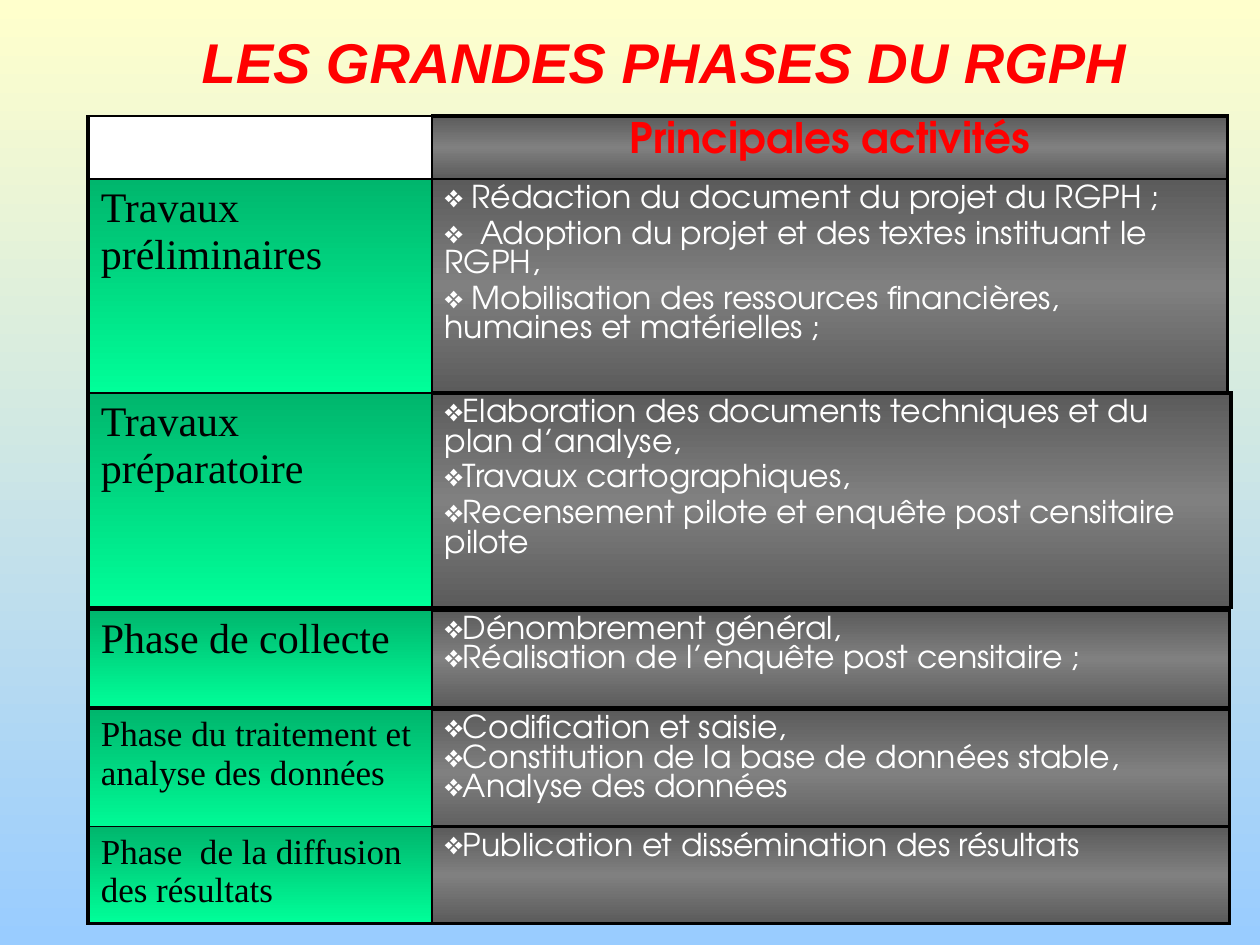
from dataclasses import dataclass

from lxml.etree import SubElement
from pptx import Presentation
from pptx.dml.color import RGBColor
from pptx.enum.text import MSO_ANCHOR, MSO_AUTO_SIZE, PP_ALIGN
from pptx.oxml.ns import qn
from pptx.util import Inches, Pt


@dataclass(frozen=True)
class Theme:
    sky_top: str = "FFFFCC"
    sky_bottom: str = "99CCFF"
    accent: str = "FF0000"
    ink: str = "000000"
    paper: str = "FFFFFF"
    phase_fill: str = "00FF99"
    activity_fill: str = "808080"
    shade: int = 46275  # darkens the edge of a cell gradient
    title_font: str = "Arial"
    phase_font: str = "Times New Roman"
    activity_font: str = "TeX Gyre Adventor"
    title_size: int = 32
    large_size: int = 24
    medium_size: int = 20
    activity_size: int = 18
    thick: float = 2.25
    thin: float = 1


theme = Theme()


def write(frame, *lines, size, font, color, bold=False, italic=False,
          align=PP_ALIGN.LEFT, bullet=None, gap=0):
    """Fill a text frame; gap is the space between paragraphs in type sizes."""
    for index, line in enumerate(lines):
        paragraph = frame.paragraphs[0] if index == 0 else frame.add_paragraph()
        if bullet:
            properties = paragraph._p.get_or_add_pPr()
            properties.set("marL", "0")
            properties.set("indent", "0")
            SubElement(properties, qn("a:buChar"), char=bullet)
        paragraph.alignment = align
        paragraph.space_before = Pt(size * gap if index else 0)
        run = paragraph.add_run()
        run.text = line
        run.font.size, run.font.name = Pt(size), font
        run.font.bold, run.font.italic = bold, italic
        run.font.color.rgb = RGBColor.from_string(color)


def format_cell(cell, borders, color, stops):
    """Draw the borders and a vertical gradient of (position, is_dark) stops."""
    properties = cell._tc.get_or_add_tcPr()
    for side, width in borders.items():
        line = SubElement(properties, qn(f"a:ln{side}"), w=str(Pt(width)))
        solid = SubElement(line, qn("a:solidFill"))
        SubElement(solid, qn("a:srgbClr"), val=theme.ink)
    if not stops:
        cell.fill.solid()
        cell.fill.fore_color.rgb = RGBColor.from_string(color)
        return
    gradient = SubElement(properties, qn("a:gradFill"), rotWithShape="0")
    stop_list = SubElement(gradient, qn("a:gsLst"))
    for position, is_dark in stops:
        stop = SubElement(stop_list, qn("a:gs"), pos=str(position * 1000))
        tone = SubElement(stop, qn("a:srgbClr"), val=color)
        if is_dark:
            SubElement(tone, qn("a:shade"), val=str(theme.shade))
    SubElement(gradient, qn("a:lin"), ang="5400000", scaled="1")


presentation = Presentation()
presentation.slide_width, presentation.slide_height = Inches(10), Inches(7.5)
slide = presentation.slides.add_slide(presentation.slide_layouts[5])

# Background
background = slide.background.fill
background.gradient()
background.gradient_angle = 270
for stop, color in zip(background.gradient_stops, (theme.sky_top, theme.sky_bottom)):
    stop.color.rgb = RGBColor.from_string(color)

# Title
title = slide.shapes.title
title.left, title.top = Inches(1.5), Inches(0.17)
title.width, title.height = Inches(7.88), Inches(0.63)
title.text_frame.word_wrap = True
title.text_frame.auto_size = MSO_AUTO_SIZE.SHAPE_TO_FIT_TEXT
title.text_frame.vertical_anchor = MSO_ANCHOR.TOP
write(title.text_frame, "LES GRANDES PHASES DU RGPH", size=theme.title_size,
      font=theme.title_font, color=theme.accent, bold=True, italic=True)

# Phases: (top, activity width, paragraph gap, rows of
# (height, phase, phase size, activities)); a row without phase is the header
phase_groups = [
    (0.92, 6.31, 0.2, [
        (0.47, None, None, ["Principales activités"]),
        (1.42, "Travaux préliminaires", theme.large_size, [
            " Rédaction du document du projet du RGPH ;",
            "  Adoption du projet et des textes instituant le RGPH,",
            " Mobilisation des ressources financières, humaines et matérielles ;"])]),
    (3.12, 6.34, 0.2, [
        (1.7, "Travaux préparatoire", theme.large_size, [
            "Elaboration des documents techniques et du plan d’analyse,",
            "Travaux cartographiques,",
            "Recensement pilote et enquête post censitaire pilote"])]),
    (4.84, 6.33, 0, [
        (0.78, "Phase de collecte", theme.large_size, [
            "Dénombrement général,",
            "Réalisation de l’enquête post censitaire ;"])]),
    (5.63, 6.33, 0, [
        (0.93, "Phase du traitement et analyse des données", theme.medium_size, [
            "Codification et saisie,",
            "Constitution de la base de données stable,",
            "Analyse des données"])]),
    (6.56, 6.33, 0, [
        (0.77, "Phase  de la diffusion des résultats", theme.medium_size, [
            "Publication et dissémination des résultats"])]),
]
left, phase_width = 0.7, 2.73
phase_stops = [(0, True), (100, False)]
activity_stops = [(0, True), (50, False), (100, True)]

for top, activity_width, gap, rows in phase_groups:
    total_height = sum(row[0] for row in rows)
    grid = slide.shapes.add_table(
        len(rows), 2, Inches(left), Inches(top),
        Inches(phase_width + activity_width), Inches(total_height)).table
    grid.first_row = grid.horz_banding = False
    grid.columns[0].width = Inches(phase_width)
    grid.columns[1].width = Inches(activity_width)

    for index, (height, phase, phase_size, activities) in enumerate(rows):
        grid.rows[index].height = Inches(height)
        phase_cell, activity_cell = grid.cell(index, 0), grid.cell(index, 1)

        # Borders: thick outside, except above the phase column
        bottom = theme.thick if index == len(rows) - 1 else theme.thin
        activity_top = theme.thick if index == 0 else theme.thin
        format_cell(phase_cell,
                    {"L": theme.thick, "R": theme.thin, "T": theme.thin, "B": bottom},
                    theme.phase_fill if phase else theme.paper,
                    phase_stops if phase else None)
        format_cell(activity_cell,
                    {"L": theme.thin, "R": theme.thick, "T": activity_top, "B": bottom},
                    theme.activity_fill, activity_stops)

        # Wording
        if phase:
            write(phase_cell.text_frame, phase, size=phase_size,
                  font=theme.phase_font, color=theme.ink)
            write(activity_cell.text_frame, *activities, size=theme.activity_size,
                  font=theme.activity_font, color=theme.paper, bullet="❖", gap=gap)
        else:
            write(activity_cell.text_frame, *activities, size=theme.large_size,
                  font=theme.activity_font, color=theme.accent, bold=True,
                  align=PP_ALIGN.CENTER)

presentation.save("out.pptx")
